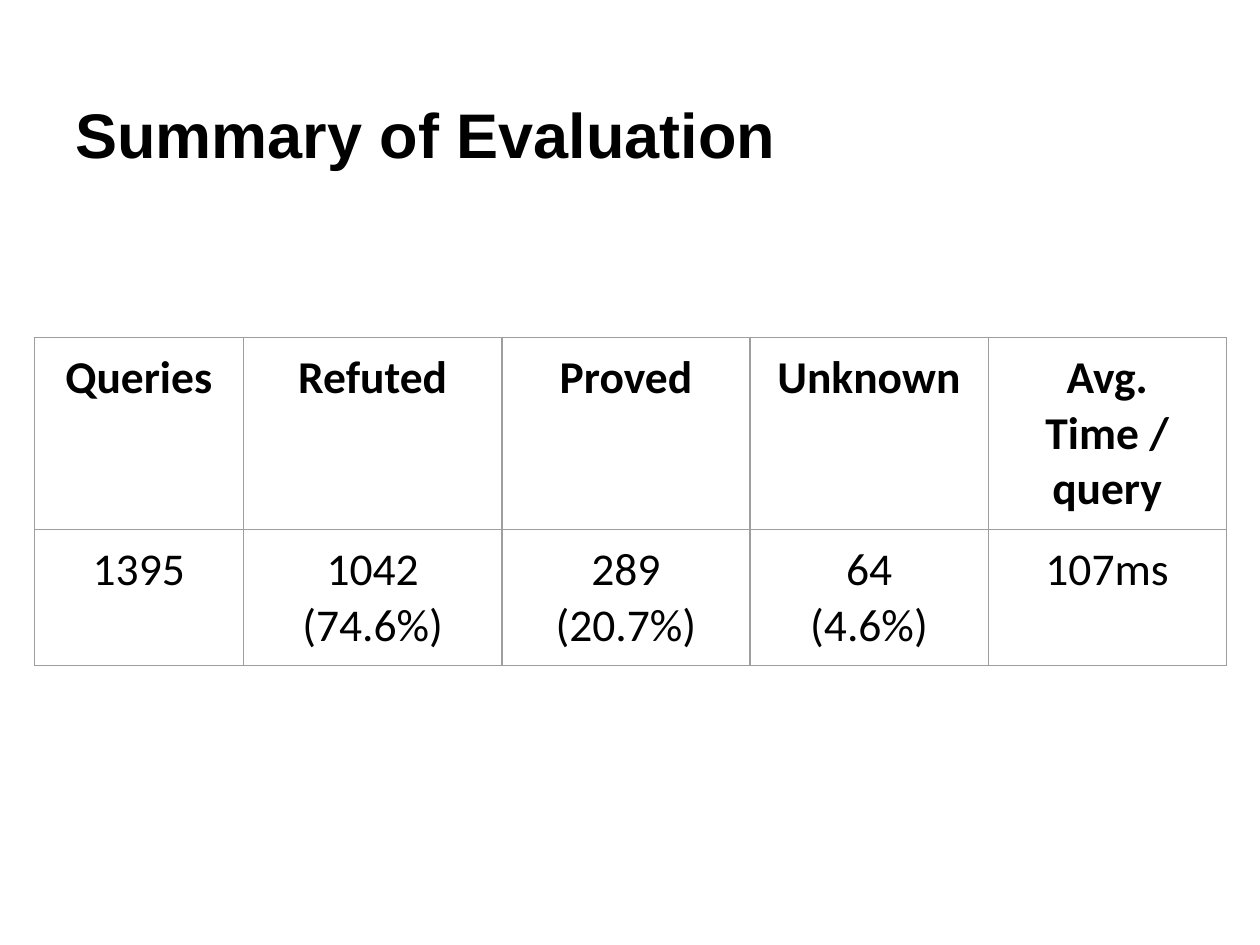
from lxml import etree
from pptx import Presentation
from pptx.dml.color import RGBColor
from pptx.enum.text import MSO_ANCHOR, MSO_AUTO_SIZE, PP_ALIGN
from pptx.oxml.ns import qn
from pptx.util import Cm, Pt

LEFT, CENTER = PP_ALIGN.LEFT, PP_ALIGN.CENTER
TOP, BOTTOM = MSO_ANCHOR.TOP, MSO_ANCHOR.BOTTOM
NO_FIT = MSO_AUTO_SIZE.NONE
TITLE_ONLY = 5

COLORS = {"text": "000000", "grid": "9E9E9E"}
INSET = Cm(0.25)
COLS = [4.22, 5.21, 5, 4.8, 4.8]
ROWS = [2.59, 2.51]
DATA = [
    ["Queries", "Refuted", "Proved", "Unknown", "Avg. Time / query"],
    ["1395", "1042\n(74.6%)", "289\n(20.7%)", "64\n(4.6%)", "107ms"],
]


def style(frame, font, size, bold, align):
    for para in frame.paragraphs:
        para.alignment = align
        for run in para.runs:
            run.font.name = font
            run.font.size = Pt(size)
            run.font.bold = bold
            run.font.color.rgb = RGBColor.from_string(COLORS["text"])


def set_inset(box):
    box.margin_left = box.margin_right = INSET
    box.margin_top = box.margin_bottom = INSET


def set_border(cell):
    props = cell._tc.get_or_add_tcPr()
    for side in ("a:lnL", "a:lnR", "a:lnT", "a:lnB"):
        line = etree.SubElement(props, qn(side), w=str(Pt(0.75)))
        fill = etree.SubElement(line, qn("a:solidFill"))
        etree.SubElement(fill, qn("a:srgbClr"), val=COLORS["grid"])


def add_title(slide, left, top, width, height):
    title = slide.shapes.title
    title.left, title.top = Cm(left), Cm(top)
    title.width, title.height = Cm(width), Cm(height)
    frame = title.text_frame
    frame.text = "Summary of Evaluation"
    frame.auto_size = NO_FIT
    frame.vertical_anchor = BOTTOM
    set_inset(frame)
    style(frame, "Arial", 36, True, LEFT)


def add_results(slide, left, top):
    table = slide.shapes.add_table(
        len(ROWS), len(COLS), Cm(left), Cm(top), Cm(sum(COLS)), Cm(sum(ROWS))
    ).table
    table.first_row = table.horz_banding = False
    for col, width in zip(table.columns, COLS):
        col.width = Cm(width)
    for row, height in zip(table.rows, ROWS):
        row.height = Cm(height)

    # Header row is bold, values are plain
    for r, texts in enumerate(DATA):
        for c, text in enumerate(texts):
            cell = table.cell(r, c)
            cell.text_frame.text = text
            cell.vertical_anchor = TOP
            set_inset(cell)
            set_border(cell)
            cell.fill.background()
            style(cell.text_frame, "Calibri", 26, r == 0, CENTER)


def main():
    deck = Presentation()
    deck.slide_width, deck.slide_height = Cm(25.4), Cm(19.05)
    slide = deck.slides.add_slide(deck.slide_layouts[TITLE_ONLY])
    add_title(slide, 1.27, 0.76, 22.86, 2.95)
    add_results(slide, 0.69, 6.81)
    deck.save("out.pptx")


if __name__ == "__main__":
    main()
